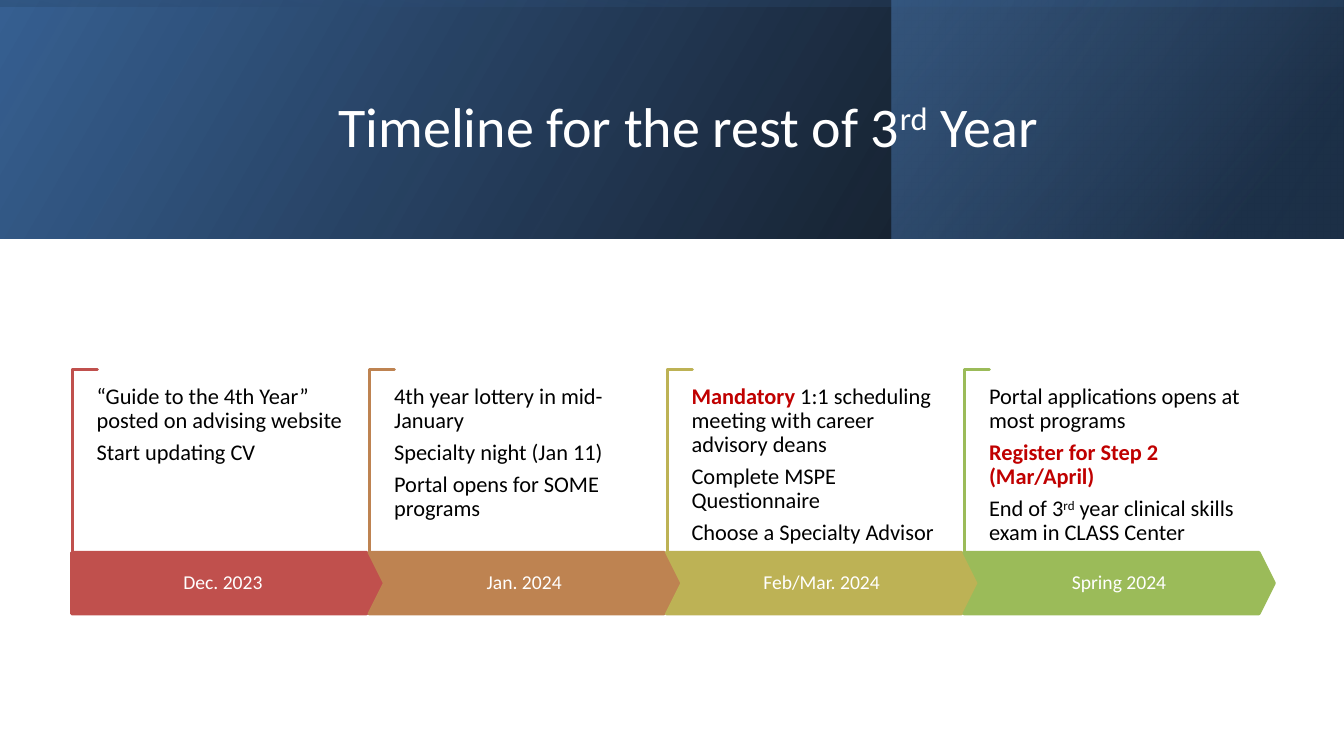
"""Build a one-slide timeline for the rest of third year."""
import lxml.etree
import pptx
import pptx.dml.color
import pptx.enum.shapes
import pptx.enum.text
import pptx.oxml.ns
import pptx.util

Inches = pptx.util.Inches
RGBColor = pptx.dml.color.RGBColor
SHAPES = pptx.enum.shapes.MSO_SHAPE
ANCHOR = pptx.enum.text.MSO_ANCHOR
ALIGN = pptx.enum.text.PP_ALIGN
qn = pptx.oxml.ns.qn

WHITE = RGBColor(0xFF, 0xFF, 0xFF)
BLACK = RGBColor(0, 0, 0)
ALERT = RGBColor(0xC0, 0, 0)
NAVY = RGBColor(0x25, 0x40, 0x61)
STEEL = RGBColor(0x37, 0x60, 0x92)
SKY = RGBColor(0x4F, 0x81, 0xBD)
RED = RGBColor(0xC0, 0x50, 0x4D)
ORANGE = RGBColor(0xBE, 0x83, 0x51)
MUSTARD = RGBColor(0xBD, 0xB2, 0x55)
GREEN = RGBColor(0x9B, 0xBB, 0x59)

FONT = "Calibri"
STAGE_LEFT, STAGE_STEP = 0.71, 2.95
KEY = {"color": ALERT, "bold": True}
RAISED = {"raised": True}

BANNERS = [
    ((0, 0, 13.33, 2.37), 0, 330, [(0, BLACK, 96), (100, STEEL, 100)]),
    ((8.84, 0, 4.48, 2.37), 0, 320, [(19, NAVY, 68), (100, SKY, 48)]),
    ((5.48, -5.48, 2.37, 13.33), 270, 350, [(23, STEEL, 16), (99, BLACK, 45)]),
]

TITLE = [("Timeline for the rest of 3", {}), ("rd", RAISED), (" Year", {})]

STAGES = [
    ("Dec. 2023", RED, [
        [("“Guide to the 4th Year” posted on advising website", {})],
        [("Start updating CV", {})],
    ]),
    ("Jan. 2024", ORANGE, [
        [("4th year lottery in mid-January", {})],
        [("Specialty night (Jan 11)", {})],
        [("Portal opens for SOME programs", {})],
    ]),
    ("Feb/Mar. 2024", MUSTARD, [
        [("Mandatory ", KEY),
         ("1:1 scheduling meeting with career advisory deans", {})],
        [("Complete MSPE Questionnaire", {})],
        [("Choose a Specialty Advisor", {})],
    ]),
    ("Spring 2024", GREEN, [
        [("Portal applications opens at most programs", {})],
        [("Register for Step 2 (Mar/April)", KEY)],
        [("End of 3", {}), ("rd", RAISED),
         (" year clinical skills exam in CLASS Center", {})],
    ]),
]


def add_run(paragraph, text, size=16, color=BLACK, bold=False, raised=False):
    run = paragraph.add_run()
    run.text = text
    run.font.name = FONT
    run.font.size = pptx.util.Pt(size)
    run.font.bold = bold
    run.font.color.rgb = color
    if raised:
        run.font._element.set("baseline", "30000")


def set_frame(frame, anchor, side=0, edge=0):
    frame.word_wrap = True
    frame.auto_size = pptx.enum.text.MSO_AUTO_SIZE.NONE
    frame.vertical_anchor = anchor
    frame.margin_left = frame.margin_right = Inches(side)
    frame.margin_top = frame.margin_bottom = Inches(edge)


def set_spacing(paragraph, after):
    paragraph.line_spacing = 0.9
    paragraph.space_after = pptx.util.Pt(after)


def add_banner(slide, box, rotation, angle, stops):
    banner = slide.shapes.add_shape(SHAPES.RECTANGLE, *map(Inches, box))
    banner.shadow.inherit = False
    banner.line.fill.background()
    banner.rotation = rotation
    properties = banner.element.spPr
    properties.find(qn("a:xfrm")).set("flipH", "1")
    gradient = lxml.etree.Element(qn("a:gradFill"), rotWithShape="1")
    stop_list = lxml.etree.SubElement(gradient, qn("a:gsLst"))
    for position, color, opacity in stops:
        stop = lxml.etree.SubElement(stop_list, qn("a:gs"), pos=str(position * 1000))
        tint = lxml.etree.SubElement(stop, qn("a:srgbClr"), val=str(color))
        lxml.etree.SubElement(tint, qn("a:alpha"), val=str(opacity * 1000))
    lxml.etree.SubElement(gradient, qn("a:lin"), ang=str(angle * 60000), scaled="0")
    properties.find(qn("a:prstGeom")).addnext(gradient)


def add_title(slide):
    title = slide.shapes.title
    title.left, title.top = Inches(1.51), Inches(0.38)
    title.width, title.height = Inches(10.63), Inches(1.72)
    set_frame(title.text_frame, ANCHOR.MIDDLE, 0.1, 0.05)
    heading = title.text_frame.paragraphs[0]
    heading.alignment = ALIGN.CENTER
    for text, style in TITLE:
        add_run(heading, text, size=40, color=WHITE, **style)
    slide.shapes._spTree.append(title.element)


def add_outlined(slide, kind, box, fill, line, adjustments):
    outlined = slide.shapes.add_shape(kind, *map(Inches, box))
    outlined.shadow.inherit = False
    outlined.fill.solid()
    outlined.fill.fore_color.rgb = fill
    outlined.line.color.rgb = line
    outlined.line.width = pptx.util.Pt(2)
    for index, value in enumerate(adjustments):
        outlined.adjustments[index] = value
    return outlined


def add_stage(slide, index, date, color, tasks):
    left = STAGE_LEFT + index * STAGE_STEP
    bracket = add_outlined(slide, SHAPES.CORNER, (left - 0.78, 4.45, 1.82, 0.25),
                           WHITE, color, (0.01, 0.01))
    bracket.rotation = 90

    kind = SHAPES.CHEVRON if index else SHAPES.PENTAGON
    arrow = add_outlined(slide, kind, (left, 5.48, 3.08, 0.61), color, color, (0.25,))
    set_frame(arrow.text_frame, ANCHOR.MIDDLE, 0.1, 0.19)
    label = arrow.text_frame.paragraphs[0]
    label.alignment = ALIGN.CENTER
    set_spacing(label, 4.9)
    add_run(label, date, size=14, color=WHITE)

    notes = slide.shapes.add_textbox(*map(Inches, (left + 0.25, 3.82, 2.5, 1.09)))
    set_frame(notes.text_frame, ANCHOR.TOP)
    for number, task in enumerate(tasks):
        frame = notes.text_frame
        paragraph = frame.add_paragraph() if number else frame.paragraphs[0]
        set_spacing(paragraph, 5.6)
        for text, style in task:
            add_run(paragraph, text, **style)


def main():
    deck = pptx.Presentation()
    deck.slide_width, deck.slide_height = Inches(13.33), Inches(7.5)
    slide = deck.slides.add_slide(deck.slide_layouts[5])
    for banner in BANNERS:
        add_banner(slide, *banner)
    add_title(slide)
    for index, stage in enumerate(STAGES):
        add_stage(slide, index, *stage)
    deck.save("out.pptx")


if __name__ == "__main__":
    main()
